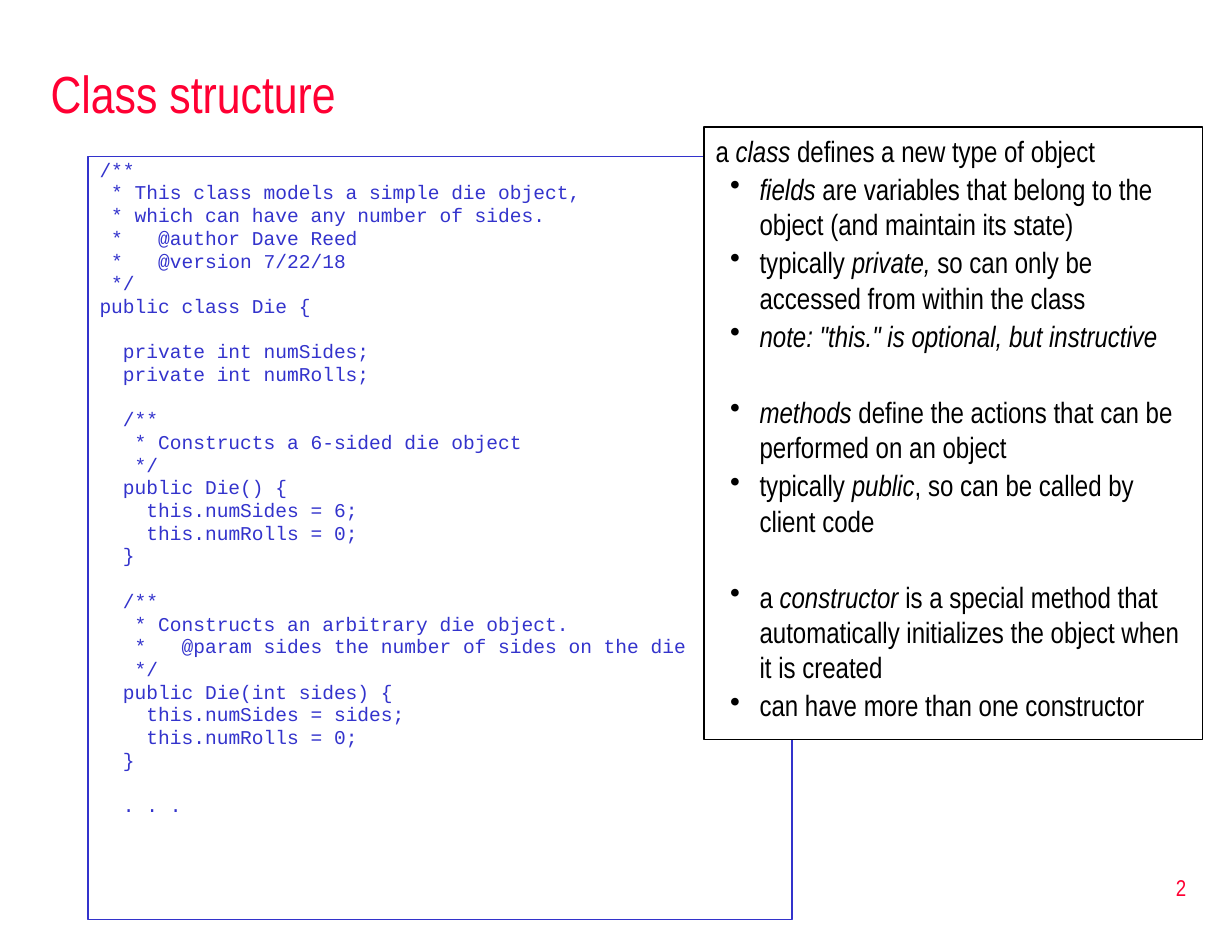
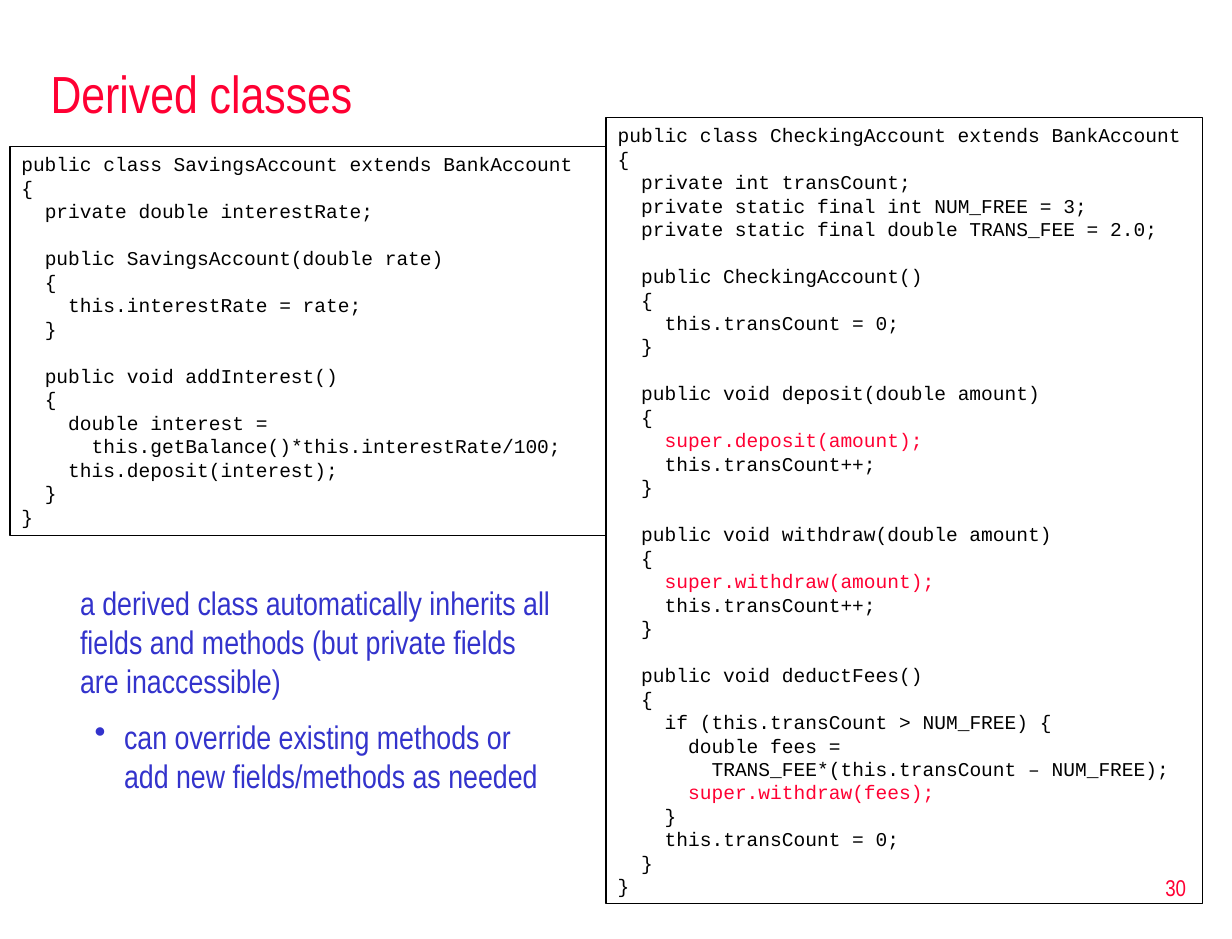
from dataclasses import dataclass

from lxml import etree
from pptx import Presentation
from pptx.dml.color import RGBColor
from pptx.enum.shapes import MSO_SHAPE
from pptx.enum.text import MSO_ANCHOR, PP_ALIGN
from pptx.oxml.ns import qn
from pptx.util import Pt

PX = 9525  # 96 px to the inch
RECTANGLE = MSO_SHAPE.RECTANGLE
TOP, MIDDLE = MSO_ANCHOR.TOP, MSO_ANCHOR.MIDDLE
LEFT, RIGHT = PP_ALIGN.LEFT, PP_ALIGN.RIGHT

RED, BLUE, BLACK, WHITE = "FF0033", "3333CC", "000000", "FFFFFF"
PROSE_FONT, CODE_FONT = "Arial Narrow", "Courier New"
CODE_SIZE = 12
CODE_CHAR_WIDTH = 0.6 * CODE_SIZE
LINE_HEIGHT = 1.2  # natural line height as a share of the font size
BULLET_MARGIN, BULLET_HANG = 36, 24


@dataclass(frozen=True)
class Box:
    left: int
    top: int
    width: int
    height: int
    border: str = ""
    border_pt: float = 1
    fill: str = ""


@dataclass(frozen=True)
class TextStyle:
    font: str
    size: int
    color: str
    space_share: float = 0  # space before, as a share of the font size
    line_spacing: float = 1
    align: PP_ALIGN = LEFT

    @property
    def space_before(self) -> float:
        return self.space_share * self.size

    @property
    def pitch(self) -> float:
        return self.size * LINE_HEIGHT * self.line_spacing + self.space_before


@dataclass(frozen=True)
class Note:
    """Prose in which *asterisks* enclose italics."""
    text: str
    bullet: bool = True
    gap_above: bool = False


TITLE_BOX = Box(32, 40, 952, 72)
NUMBER_BOX = Box(770, 700, 210, 51)
TITLE_STYLE = TextStyle(PROSE_FONT, 32, RED)
NUMBER_STYLE = TextStyle(PROSE_FONT, 14, RED, align=RIGHT)

DIE_BOX = Box(72, 128, 576, 624, BLUE, 0.75)
DIE_STYLE = TextStyle(CODE_FONT, CODE_SIZE, BLUE, 0.2, 0.8)
DIE_CODE = """\
/**
 * This class models a simple die object,
 * which can have any number of sides.
 *   @author Dave Reed
 *   @version 7/22/18
 */
public class Die {

  private int numSides;
  private int numRolls;

  /**
   * Constructs a 6-sided die object
   */
  public Die() {
    this.numSides = 6;
    this.numRolls = 0;
  }

  /**
   * Constructs an arbitrary die object.
   *   @param sides the number of sides on the die
   */
  public Die(int sides) {
    this.numSides = sides;
    this.numRolls = 0;
  }

  . . ."""

CLASS_NOTES_BOX = Box(576, 104, 408, 501, BLACK, fill=WHITE)
CLASS_NOTES_STYLE = TextStyle(PROSE_FONT, 18, BLACK, 0.1)
CLASS_NOTES = [
    Note("a *class* defines a new type of object", bullet=False),
    Note("*fields* are variables that belong to the object (and maintain its state)"),
    Note("typically *private, *so can only be accessed from within the class"),
    Note('*note: "this." is optional, but instructive*'),
    Note("*methods* define the actions that can be performed on an object", gap_above=True),
    Note("typically *public*, so can be called by client code"),
    Note("a *constructor* is a special method that automatically initializes "
         "the object when it is created", gap_above=True),
    Note("can have more than one constructor"),
]

ACCOUNT_STYLE = TextStyle(CODE_FONT, CODE_SIZE, BLACK)
SAVINGS_BOX = Box(8, 120, 488, 318, BLACK)
SAVINGS_CODE = """\
public class SavingsAccount extends BankAccount
{
  private double interestRate;

  public SavingsAccount(double rate)
  {
    this.interestRate = rate;
  }

  public void addInterest()
  {
    double interest =
      this.getBalance()*this.interestRate/100;
    this.deposit(interest);
  }
}"""

CHECKING_BOX = Box(496, 96, 488, 643, BLACK)
CHECKING_CODE = """\
public class CheckingAccount extends BankAccount
{
  private int transCount;
  private static final int NUM_FREE = 3;
  private static final double TRANS_FEE = 2.0;

  public CheckingAccount()
  {
    this.transCount = 0;
  }

  public void deposit(double amount)
  {
    super.deposit(amount);
    this.transCount++;
  }

  public void withdraw(double amount)
  {
    super.withdraw(amount);
    this.transCount++;
  }

  public void deductFees()
  {
    if (this.transCount > NUM_FREE) {
      double fees =
        TRANS_FEE*(this.transCount – NUM_FREE);
      super.withdraw(fees);
    }
    this.transCount = 0;
  }
}"""

DERIVED_NOTES_BOX = Box(56, 472, 408, 185)
DERIVED_NOTES_STYLE = TextStyle(PROSE_FONT, 20, BLUE, 0.5)
DERIVED_NOTES = [
    Note("a derived class automatically inherits all fields and methods "
         "(but private fields are inaccessible)", bullet=False),
    Note("can override existing methods or add new fields/methods as needed"),
]


def rgb(hex_color: str) -> RGBColor:
    return RGBColor.from_string(hex_color)


def add_frame(slide, box: Box, anchor: MSO_ANCHOR = TOP):
    """Add the box, bordered if it has a border colour; return its text frame."""
    place = [n * PX for n in (box.left, box.top, box.width, box.height)]
    if box.border:
        panel = slide.shapes.add_shape(RECTANGLE, *place)
        panel.shadow.inherit = False
        panel.line.color.rgb = rgb(box.border)
        panel.line.width = Pt(box.border_pt)
    else:
        panel = slide.shapes.add_textbox(*place)
    if box.fill:
        panel.fill.solid()
        panel.fill.fore_color.rgb = rgb(box.fill)
    else:
        panel.fill.background()
    frame = panel.text_frame
    frame.word_wrap = True
    frame.vertical_anchor = anchor
    return frame


def next_paragraph(frame, style: TextStyle, gap_above: bool = False):
    """Start a styled paragraph, one line lower if gap_above."""
    first = frame.paragraphs[0]
    paragraph = frame.add_paragraph() if first.runs else first
    paragraph.alignment = style.align
    paragraph.line_spacing = style.line_spacing
    paragraph.space_before = Pt(style.space_before + gap_above * style.pitch)
    paragraph.font.name = style.font
    paragraph.font.size = Pt(style.size)
    paragraph.font.color.rgb = rgb(style.color)
    return paragraph


def set_indent(paragraph, margin: int, hang: int = 0) -> None:
    properties = paragraph._p.get_or_add_pPr()
    properties.set("marL", str(margin))
    properties.set("indent", str(-hang))


def add_bullet(paragraph) -> None:
    paragraph.level = 1
    set_indent(paragraph, BULLET_MARGIN * PX, BULLET_HANG * PX)
    bullet = etree.Element(qn("a:buChar"), char="•")
    paragraph._p.pPr.find(qn("a:defRPr")).addprevious(bullet)


def add_line(slide, box: Box, style: TextStyle, text: str) -> None:
    frame = add_frame(slide, box, MIDDLE)
    next_paragraph(frame, style).add_run().text = text


def add_code(slide, box: Box, style: TextStyle, code: str) -> None:
    """Set code line by line, with calls to super in red."""
    frame = add_frame(slide, box)
    after_blank = False
    for line in code.splitlines():
        statement = line.lstrip()
        if statement:
            paragraph = next_paragraph(frame, style, after_blank)
            depth = len(line) - len(statement)
            set_indent(paragraph, Pt(depth * CODE_CHAR_WIDTH))
            paragraph.add_run().text = statement
            if statement.startswith("super."):
                paragraph.font.color.rgb = rgb(RED)
        after_blank = not statement


def add_notes(slide, box: Box, style: TextStyle, notes: list[Note]) -> None:
    frame = add_frame(slide, box)
    for note in notes:
        paragraph = next_paragraph(frame, style, note.gap_above)
        if note.bullet:
            add_bullet(paragraph)
        for position, words in enumerate(note.text.split("*")):
            if words:
                run = paragraph.add_run()
                run.text = words
                if position % 2:
                    run.font.italic = True


def add_slide(deck, title: str, number: int):
    slide = deck.slides.add_slide(deck.slide_layouts[6])
    add_line(slide, NUMBER_BOX, NUMBER_STYLE, str(number))
    add_line(slide, TITLE_BOX, TITLE_STYLE, title)
    return slide


def main() -> None:
    deck = Presentation()
    deck.slide_width, deck.slide_height = 1008 * PX, 768 * PX

    structure = add_slide(deck, "Class structure", 2)
    add_code(structure, DIE_BOX, DIE_STYLE, DIE_CODE)
    add_notes(structure, CLASS_NOTES_BOX, CLASS_NOTES_STYLE, CLASS_NOTES)

    derived = add_slide(deck, "Derived classes", 30)
    add_code(derived, SAVINGS_BOX, ACCOUNT_STYLE, SAVINGS_CODE)
    add_code(derived, CHECKING_BOX, ACCOUNT_STYLE, CHECKING_CODE)
    add_notes(derived, DERIVED_NOTES_BOX, DERIVED_NOTES_STYLE, DERIVED_NOTES)

    deck.save("out.pptx")


if __name__ == "__main__":
    main()
